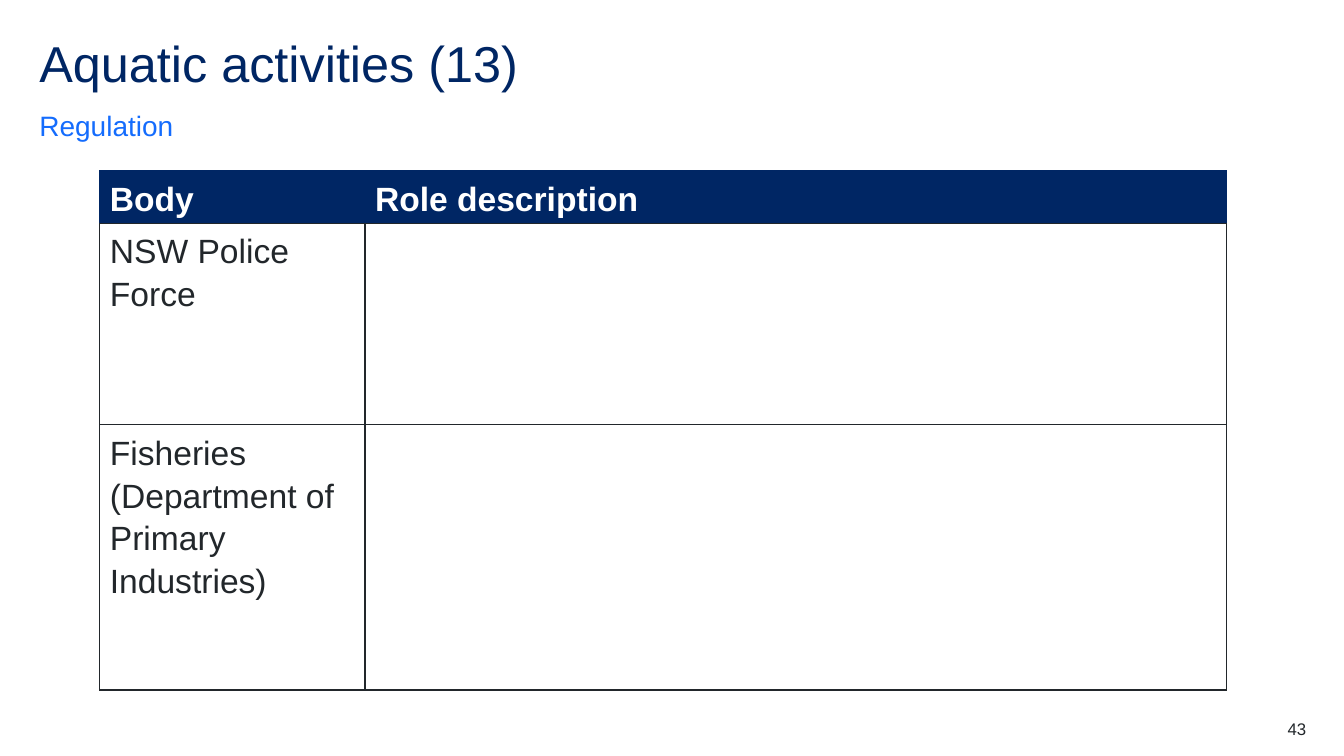
"""Build the aquatic activities regulation slide."""
from pptx import Presentation
from pptx.dml.color import RGBColor
from pptx.enum.text import MSO_ANCHOR, MSO_AUTO_SIZE, PP_ALIGN
from pptx.oxml.ns import qn
from pptx.util import Pt
from lxml.etree import SubElement

TITLE = "Aquatic activities (13)"
TOPIC = "Regulation"
PAGE = "43"
ROWS = [
    ("Body", "Role description"),
    ("NSW Police Force", ""),
    ("Fisheries (Department of Primary Industries)", ""),
]
COLORS = {"navy": "002664", "blue": "146CFD", "ink": "22272B", "white": "FFFFFF"}
WIDTHS = (189.4, 615.6)
HEIGHTS = (34.6, 144, 189.4)
LEFT, TOP = 71.3, 121.7
EDGE = 28.1


def write(frame, text, size=24, color="ink", bold=False, align=PP_ALIGN.LEFT,
          line=1.0, after=0, plain=False):
    frame.text = text
    para = frame.paragraphs[0]
    if plain:
        props = para._p.get_or_add_pPr()
        props.set("marL", "0")
        props.set("indent", "0")
        SubElement(props, qn("a:buNone"))
    para.alignment = align
    para.line_spacing = line
    para.space_before = Pt(0)
    para.space_after = Pt(after)
    for run in para.runs:
        font = run.font
        font.name, font.size, font.bold = "Arial", Pt(size), bold
        font.color.rgb = RGBColor.from_string(COLORS[color])


def place(shape, left, top, width, height, anchor=MSO_ANCHOR.TOP):
    shape.left, shape.top = Pt(left), Pt(top)
    shape.width, shape.height = Pt(width), Pt(height)
    frame = shape.text_frame
    frame.margin_left = frame.margin_right = 0
    frame.margin_top = frame.margin_bottom = 0
    frame.word_wrap = True
    frame.auto_size = MSO_AUTO_SIZE.NONE
    frame.vertical_anchor = anchor
    return frame


def rule(cell, side, color, width):
    line = SubElement(cell._tc.get_or_add_tcPr(), qn(f"a:ln{side}"), w=str(Pt(width)))
    fill = SubElement(line, qn("a:solidFill"))
    SubElement(fill, qn("a:srgbClr"), val=COLORS[color])


def fill_table(table):
    for col, width in zip(table.columns, WIDTHS):
        col.width = Pt(width)
    for r, texts in enumerate(ROWS):
        head = r == 0
        table.rows[r].height = Pt(HEIGHTS[r])
        for c, text in enumerate(texts):
            cell = table.cell(r, c)
            for side in "LRTB":
                navy = head and side != "B"
                rule(cell, side, "navy" if navy else "ink", 0.5 if navy else 1)
            cell.fill.solid()
            cell.fill.fore_color.rgb = RGBColor.from_string(
                COLORS["navy" if head else "white"])
            if text:
                write(cell.text_frame, text, color="white" if head else "ink",
                      bold=head, line=1.14, after=6)


def main():
    deck = Presentation()
    deck.slide_width, deck.slide_height = Pt(960), Pt(540)
    slide = deck.slides.add_slide(deck.slide_layouts[1])
    title, body = slide.shapes.title, slide.placeholders[1]
    write(place(title, EDGE, EDGE, 378, 43.2), TITLE, size=36, color="navy", line=0.9)
    write(place(body, EDGE, 77, 378, 24.5, MSO_ANCHOR.BOTTOM), TOPIC, size=20,
          color="blue", line=1.5, after=12, plain=True)
    grid = slide.shapes.add_table(len(ROWS), len(WIDTHS), Pt(LEFT), Pt(TOP),
                                  Pt(sum(WIDTHS)), Pt(sum(HEIGHTS)))
    fill_table(grid.table)
    page = slide.shapes.add_textbox(0, 0, 0, 0)
    write(place(page, 876.2, 513.4, 56.9, 14.4), PAGE, size=12, align=PP_ALIGN.RIGHT)
    deck.save("out.pptx")


if __name__ == "__main__":
    main()
